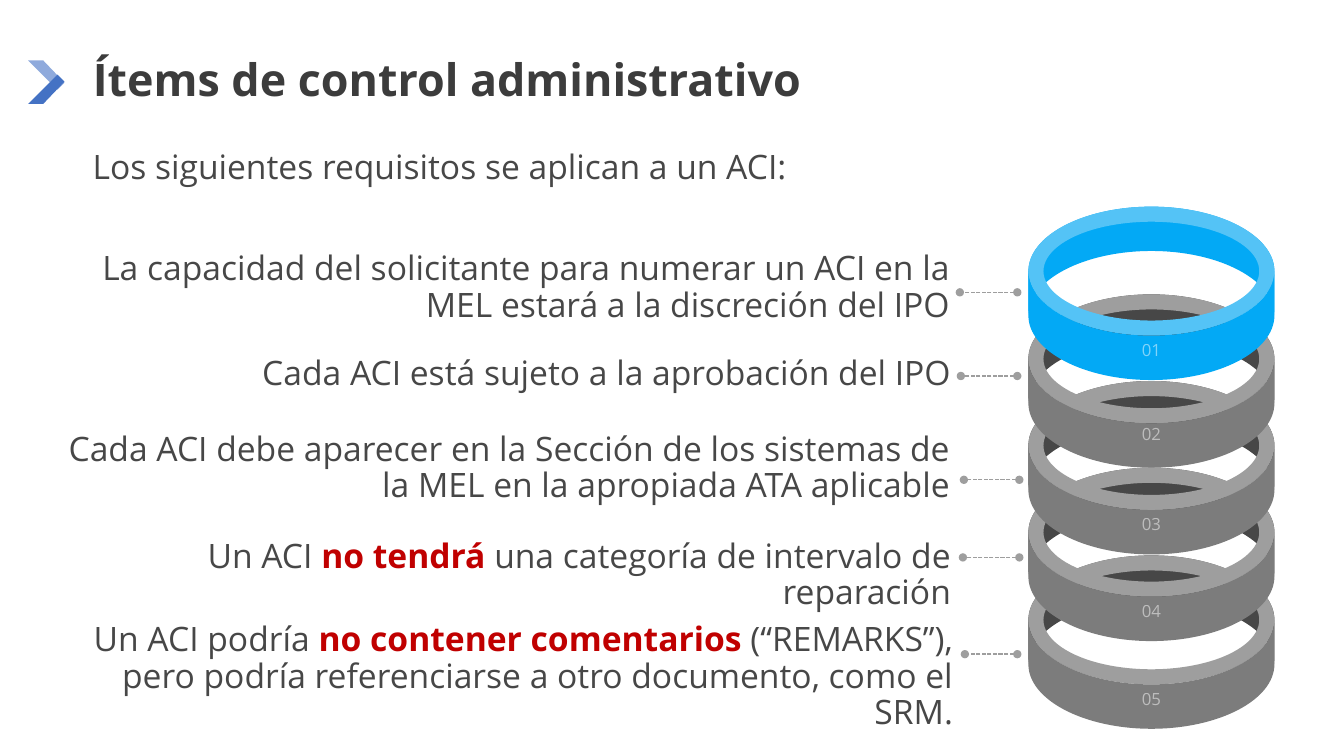
from dataclasses import dataclass

from lxml.etree import SubElement
from pptx import Presentation
from pptx.dml.color import RGBColor
from pptx.enum.dml import MSO_LINE
from pptx.enum.shapes import MSO_CONNECTOR, MSO_SHAPE
from pptx.enum.text import MSO_ANCHOR, PP_ALIGN
from pptx.oxml.ns import qn
from pptx.shapes.autoshape import Shape
from pptx.slide import Slide
from pptx.text.text import _Paragraph, _Run
from pptx.util import Inches, Pt

FONT = "Open Sans"
HUES = {
    "title": "3C3C3C", "text": "474747", "alert": "C00000", "white": "FFFFFF",
    "pale": "8FAADC", "navy": "4472C4", "line": "9E9E9E",
}
GRAY = {"back": "474747", "rim": "9E9E9E", "front": "7C7C7C"}
BLUE = {"back": "03A9F5", "rim": "54C3F6", "front": "03A9F5"}

MID, WIDE, TALL = 11.42, 1.22, 0.64
BAND, DEPTH, BEND = 0.15, 0.44, 0.55

Point = tuple[float, float]


@dataclass
class Item:
    code: str
    ring: float
    left: float
    top: float
    high: float
    start: float
    end: float
    level: float
    runs: list[tuple[str, bool]]
    hues: dict[str, str]
    inset: float = 0.48


ITEMS = [
    Item("01", 2.69, 0.3, 2.45, 0.64, 10.09, 9.52, 2.9,
         [("La capacidad del solicitante para numerar un ACI en la MEL "
           "estará a la discreción del IPO", False)], BLUE),
    Item("02", 3.56, 0.31, 3.49, 0.65, 10.09, 9.53, 3.73,
         [("Cada ACI está sujeto a la aprobación del IPO", False)], GRAY, 0.4),
    Item("03", 4.42, 0.3, 4.24, 0.7, 10.11, 9.56, 4.76,
         [("Cada ACI debe aparecer en la Sección de los sistemas de la MEL "
           "en la apropiada ATA aplicable", False)], GRAY),
    Item("04", 5.28, 0.31, 5.3, 0.59, 10.11, 9.55, 5.53,
         [("Un ACI ", False), ("no tendrá", True),
          (" una categoría de intervalo de reparación", False)], GRAY),
    Item("05", 6.15, 0.33, 6.13, 1.01, 10.09, 9.57, 6.49,
         [("Un ACI podría ", False), ("no contener comentarios ", True),
          ("(“REMARKS”), pero podría referenciarse a otro documento, "
           "como el SRM.", False)], GRAY),
]


def paint(shape: Shape, hue: str) -> None:
    shape.shadow.inherit = False
    shape.fill.solid()
    shape.fill.fore_color.rgb = RGBColor.from_string(hue)
    shape.line.fill.background()


def outline(slide: Slide, points: list[Point], hue: str) -> Shape:
    spots = [(Inches(x), Inches(y)) for x, y in points]
    pen = slide.shapes.build_freeform(*spots[0])
    pen.add_line_segments(spots[1:], close=True)
    shape = pen.convert_to_shape()
    paint(shape, hue)
    return shape


def arc(y: float, side: int, rise: float) -> list[Point]:
    x, peak = side * WIDE, y + rise
    return [(MID + x, y), (MID + x, y + BEND * rise), (MID + BEND * x, peak),
            (MID, peak), (MID - BEND * x, peak), (MID - x, y + BEND * rise),
            (MID - x, y)]


def add_wall(slide: Slide, near: float, far: float, rise: float, hue: str) -> Shape:
    shape = outline(slide, arc(near, 1, rise) + arc(far, -1, rise), hue)
    steps = list(shape._element.iter(qn("a:lnTo")))
    for first in (0, 3, 7, 10):
        trio = steps[first:first + 3]
        curve = trio[0].makeelement(qn("a:cubicBezTo"))
        trio[0].addprevious(curve)
        for step in trio:
            curve.append(step[0])
            step.getparent().remove(step)
    return shape


def write(para: _Paragraph, text: str, size: float, hue: str, bold: bool = False) -> _Run:
    run = para.add_run()
    run.text = text
    run.font.name = FONT
    run.font.size = Pt(size)
    run.font.bold = bold
    run.font.color.rgb = RGBColor.from_string(hue)
    return run


def add_ring(slide: Slide, item: Item) -> None:
    y, hues = item.ring, item.hues
    add_wall(slide, y, y + DEPTH, -TALL, hues["back"])
    rim = slide.shapes.add_shape(
        MSO_SHAPE.DONUT, Inches(MID - WIDE), Inches(y - TALL),
        Inches(2 * WIDE), Inches(2 * TALL))
    rim.adjustments[0] = BAND / (2 * TALL)
    paint(rim, hues["rim"])
    frame = add_wall(slide, y + DEPTH, y, TALL, hues["front"]).text_frame
    frame.margin_left = frame.margin_right = frame.margin_bottom = 0
    frame.margin_top = Inches(item.inset)
    frame.vertical_anchor = MSO_ANCHOR.MIDDLE
    para = frame.paragraphs[0]
    para.alignment = PP_ALIGN.CENTER
    run = write(para, item.code, 12, HUES["white"])
    tint = run._r.find(".//" + qn("a:srgbClr"))
    SubElement(tint, qn("a:alpha"), val="50000")


def add_text(slide: Slide, box: tuple[float, float, float, float],
             runs: list[tuple[str, bool]], align: PP_ALIGN, space: float) -> None:
    frame = slide.shapes.add_textbox(*map(Inches, box)).text_frame
    frame.word_wrap = True
    para = frame.paragraphs[0]
    para.alignment = align
    para.line_spacing = space
    for text, alert in runs:
        write(para, text, 24, HUES["alert" if alert else "text"], alert)


def add_link(slide: Slide, item: Item) -> None:
    link = slide.shapes.add_connector(
        MSO_CONNECTOR.STRAIGHT, Inches(item.start), Inches(item.level),
        Inches(item.end), Inches(item.level))
    link.line.color.rgb = RGBColor.from_string(HUES["line"])
    link.line.width = Pt(1)
    link.line.dash_style = MSO_LINE.SQUARE_DOT
    line = link._element.spPr.find(qn("a:ln"))
    for end in ("a:headEnd", "a:tailEnd"):
        SubElement(line, qn(end), type="oval")
    SubElement(link._element.spPr, qn("a:effectLst"))


def add_title(slide: Slide) -> None:
    title = slide.shapes.title
    title.left, title.top = Inches(0.82), Inches(0.08)
    title.width, title.height = Inches(11.64), Inches(1.46)
    title.text_frame.vertical_anchor = MSO_ANCHOR.MIDDLE
    para = title.text_frame.paragraphs[0]
    para.alignment = PP_ALIGN.LEFT
    para.line_spacing = 0.9
    write(para, "Ítems de control administrativo", 32, HUES["title"], True)


def main() -> None:
    deck = Presentation()
    deck.slide_width, deck.slide_height = Inches(13.33), Inches(7.5)
    slide = deck.slides.add_slide(deck.slide_layouts[5])
    wing = [(0.28, 0.6), (0.57, 0.89), (0.64, 0.82), (0.43, 0.6)]
    outline(slide, wing, HUES["pale"])
    outline(slide, [(x, 1.63 - y) for x, y in wing], HUES["navy"])
    add_title(slide)
    add_text(slide, (0.82, 1.32, 8.01, 0.6),
             [("Los siguientes requisitos se aplican a un ACI:", False)],
             PP_ALIGN.JUSTIFY, 1.2)
    for item in reversed(ITEMS):
        add_ring(slide, item)
    for item in ITEMS:
        box = (item.left, item.top, 9.22, item.high)
        add_text(slide, box, item.runs, PP_ALIGN.RIGHT, 0.9)
        add_link(slide, item)
    deck.save("out.pptx")


if __name__ == "__main__":
    main()
